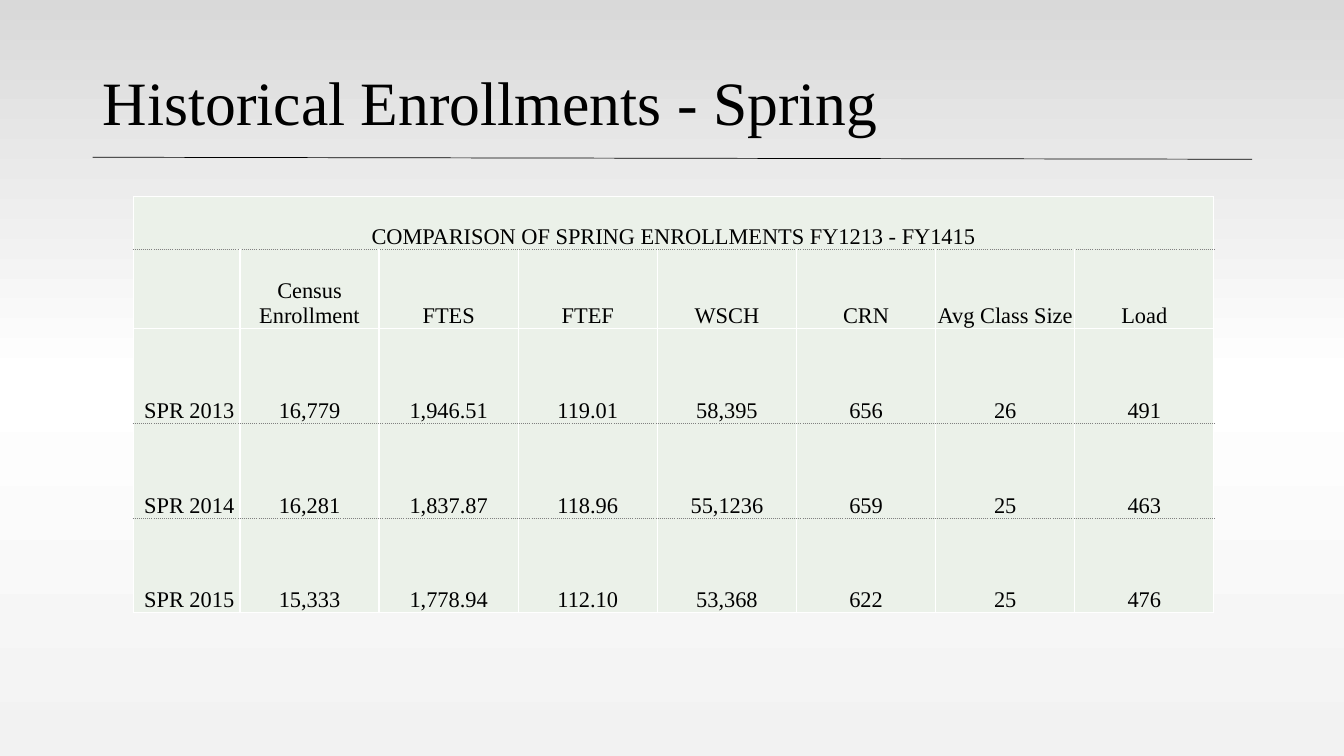
from copy import deepcopy

from lxml.etree import SubElement
from pptx import Presentation
from pptx.dml.color import RGBColor
from pptx.enum.shapes import MSO_CONNECTOR
from pptx.enum.text import MSO_ANCHOR as Anchor, PP_ALIGN as Align
from pptx.oxml.ns import qn
from pptx.util import Inches, Pt

BLACK, WHITE, GREY, PALE_GREEN = "000000", "FFFFFF", "808080", "EBF1E9"
HEADERS = ["", "Census Enrollment", "FTES", "FTEF", "WSCH", "CRN", "Avg Class Size", "Load"]
TERMS = [
    ["SPR 2013", "16,779", "1,946.51", "119.01", "58,395", "656", "26", "491"],
    ["SPR 2014", "16,281", "1,837.87", "118.96", "55,1236", "659", "25", "463"],
    ["SPR 2015", "15,333", "1,778.94", "112.10", "53,368", "622", "25", "476"],
]
CAPTION = ["COMPARISON OF SPRING ENROLLMENTS FY1213 - FY1415"] + [""] * 7
COLUMN_WIDTHS = [1.06] + [1.38] * 7
ROW_HEIGHTS = [0.52, 0.79] + [0.94] * 3
SOLID, DOTTED = (WHITE, 1, "solid"), (GREY, 0.25, "sysDot")
DOTTED_BELOW = {0, 2, 3}


def color(value):
    return RGBColor.from_string(value)


def apply(target, values):
    for name, value in values.items():
        setattr(target, name, value)


class EnrollmentSlide:
    """Holds the text style and the slide being built."""

    def __init__(self, presentation, font="Times New Roman"):
        self.font = font
        self.slide = presentation.slides.add_slide(presentation.slide_layouts[5])

    def background(self, stops):
        fill = self.slide.background.fill
        fill.gradient()
        fill.gradient_angle = 270
        stop_list = next(self.slide.element.iter(qn("a:gsLst")))
        stop_list.insert(1, deepcopy(stop_list[0]))
        for stop, (position, value) in zip(fill.gradient_stops, stops):
            stop.position = position
            stop.color.rgb = color(value)

    def text(self, frame, text, size, align):
        frame.text = text
        paragraph = frame.paragraphs[0]
        paragraph.alignment = align
        for run in paragraph.runs:
            apply(run.font, {"size": Pt(size), "name": self.font, "bold": False})
            run.font.color.rgb = color(BLACK)
        return paragraph

    def title(self, text, left, top, width, height):
        shape = self.slide.shapes.title
        apply(shape, {"left": Inches(left), "top": Inches(top),
                      "width": Inches(width), "height": Inches(height)})
        shape.text_frame.vertical_anchor = Anchor.MIDDLE
        self.text(shape.text_frame, text, 44, Align.LEFT).line_spacing = 0.9

    def rule(self, *ends):
        connector = self.slide.shapes.add_connector(
            MSO_CONNECTOR.STRAIGHT, *map(Inches, ends))
        connector.line.width = Pt(0.5)
        connector.line.color.rgb = color(BLACK)
        SubElement(connector.element.spPr, qn("a:effectLst"))

    def borders(self, cell, sides):
        properties = cell._tc.get_or_add_tcPr()
        for index, (side, (value, width, dash)) in enumerate(sides.items()):
            line = SubElement(properties, qn(f"a:ln{side}"), w=str(Pt(width)))
            SubElement(SubElement(line, qn("a:solidFill")), qn("a:srgbClr"), val=value)
            SubElement(line, qn("a:prstDash"), val=dash)
            properties.insert(index, line)

    def cell(self, cell, text, row, column):
        apply(cell, {"vertical_anchor": Anchor.BOTTOM, "margin_left": Inches(0.01),
                     "margin_right": Inches(0.01), "margin_top": Inches(0.01),
                     "margin_bottom": 0})
        is_term = row > 1 and column == 0
        paragraph = self.text(cell.text_frame, text, 16, Align.LEFT if is_term else Align.CENTER)
        if is_term:
            paragraph._p.get_or_add_pPr().set("marL", str(Inches(0.1)))
        cell.fill.solid()
        cell.fill.fore_color.rgb = color(PALE_GREEN)
        self.borders(cell, {"L": SOLID, "R": SOLID,
                            "T": DOTTED if row - 1 in DOTTED_BELOW else SOLID,
                            "B": DOTTED if row in DOTTED_BELOW else SOLID})

    def table(self, rows, left, top):
        sizes = sum(COLUMN_WIDTHS), sum(ROW_HEIGHTS)
        table = self.slide.shapes.add_table(
            len(rows), len(COLUMN_WIDTHS), *map(Inches, (left, top, *sizes))).table
        apply(table, {"first_row": False, "horz_banding": False})
        for column, width in zip(table.columns, COLUMN_WIDTHS):
            column.width = Inches(width)
        for row, height in zip(table.rows, ROW_HEIGHTS):
            row.height = Inches(height)
        for row, texts in enumerate(rows):
            for column, text in enumerate(texts):
                self.cell(table.cell(row, column), text, row, column)
        table.cell(0, 0).merge(table.cell(0, len(COLUMN_WIDTHS) - 1))


def main():
    presentation = Presentation()
    apply(presentation, {"slide_width": Inches(13.33), "slide_height": Inches(7.5)})
    page = EnrollmentSlide(presentation)
    page.background([(0, "D9D9D9"), (0.5, WHITE), (1, "F2F2F2")])
    page.rule(0.92, 1.56, 12.42, 1.58)
    page.title("Historical Enrollments - Spring", 0.92, 0.4, 11.5, 1.29)
    page.table([CAPTION, HEADERS, *TERMS], 1.32, 1.95)
    presentation.save("out.pptx")


if __name__ == "__main__":
    main()
